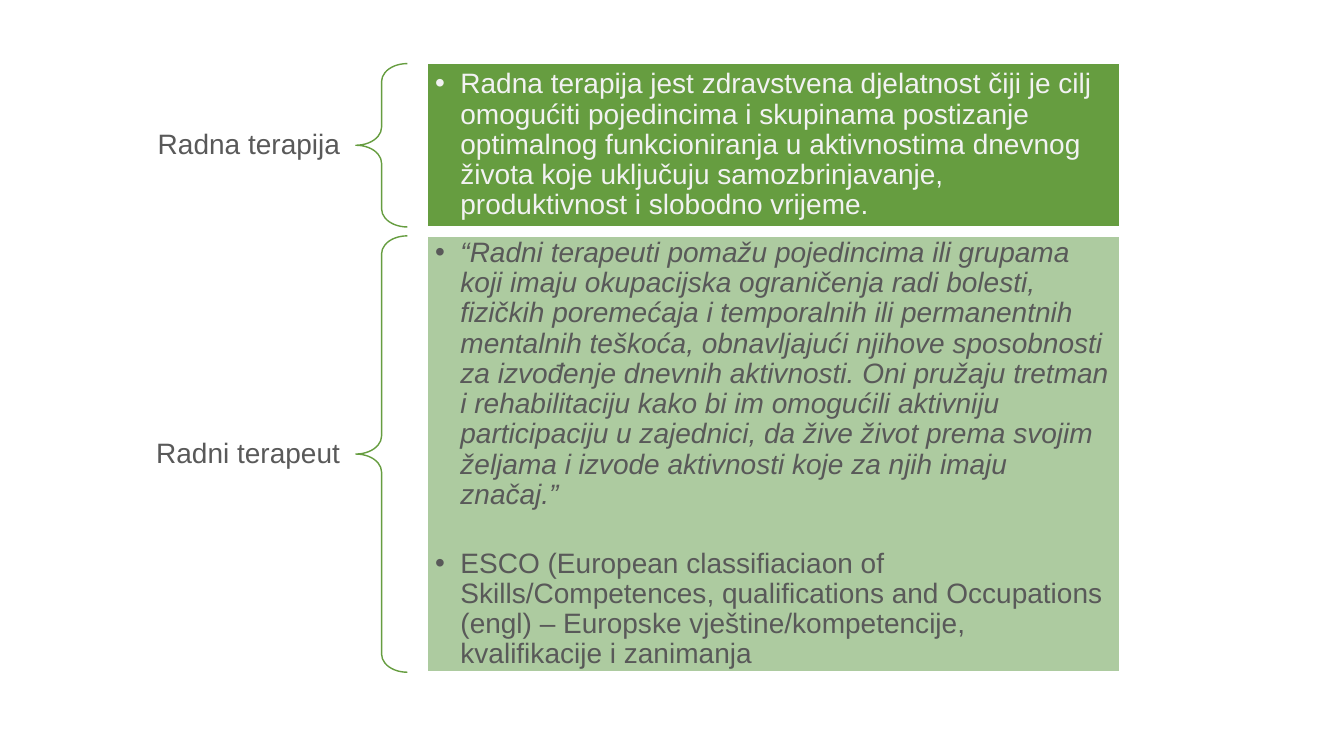
"""Build a slide that defines occupational therapy and the occupational therapist."""
from dataclasses import dataclass

from lxml import etree
from pptx import Presentation
from pptx import util as u
from pptx.dml.color import RGBColor
from pptx.enum import shapes, text
from pptx.oxml.ns import qn

ROWS = [
    {"label": "Radna terapija", "height": 116.7, "fill": "669D40", "color": "F2F2F2",
     "items": [("Radna terapija jest zdravstvena djelatnost čiji je cilj omogućiti "
                "pojedincima i skupinama postizanje optimalnog funkcioniranja u "
                "aktivnostima dnevnog života koje uključuju samozbrinjavanje, "
                "produktivnost i slobodno vrijeme.", False)]},
    {"label": "Radni terapeut", "height": 311.7, "fill": "ADCBA0", "color": "595959",
     "items": [("“Radni terapeuti pomažu pojedincima ili grupama koji imaju okupacijska "
                "ograničenja radi bolesti, fizičkih poremećaja i temporalnih ili "
                "permanentnih mentalnih teškoća, obnavljajući njihove sposobnosti za "
                "izvođenje dnevnih aktivnosti. Oni pružaju tretman i rehabilitaciju kako "
                "bi im omogućili aktivniju participaciju u zajednici, da žive život prema "
                "svojim željama i izvode aktivnosti koje za njih imaju značaj.”", True),
               ("ESCO (European classifiaciaon of Skills/Competences, qualifications and "
                "Occupations (engl) – Europske vještine/kompetencije, kvalifikacije i "
                "zanimanja", False)]},
]


@dataclass(frozen=True)
class Theme:
    """Colours, font and type size."""
    font: str = "Arial"
    size: float = 20
    label: str = "595959"
    brace: str = "669D40"
    edge: str = "FFFFFF"


THEME = Theme()
TOP, ROW_GAP = 45.4, 6.4
LABEL_LEFT, LABEL_WIDTH, LABEL_HEIGHT = 72, 182.2, 31
BRACE_WIDTH, BOX_GAP, BOX_WIDTH = 36.7, 14.4, 494.6
ITEM_GAP, INDENT = 27.6, 18


def write(tf, items, color, align=text.PP_ALIGN.LEFT, bullet=False, inset=(5.6, 5.6)):
    """Fill a text frame with (wording, italic) paragraphs."""
    tf.word_wrap = True
    tf.vertical_anchor = text.MSO_ANCHOR.MIDDLE
    tf.margin_left = tf.margin_right = u.Pt(inset[0])
    tf.margin_top = tf.margin_bottom = u.Pt(inset[1])
    for i, (wording, italic) in enumerate(items):
        p = tf.add_paragraph() if i else tf.paragraphs[0]
        p.alignment, p.line_spacing = align, 0.9
        p.space_before = u.Pt(ITEM_GAP if i else 0)
        if bullet:
            pPr = p._p.get_or_add_pPr()
            pPr.set("marL", str(u.Pt(INDENT)))
            pPr.set("indent", str(u.Pt(-INDENT)))
            etree.SubElement(pPr, qn("a:buFont"), typeface=THEME.font)
            etree.SubElement(pPr, qn("a:buChar"), char="•")
        r = p.add_run()
        r.text = wording
        r.font.name, r.font.size, r.font.italic = THEME.font, u.Pt(THEME.size), italic
        r.font.color.rgb = RGBColor.from_string(color)


def add_shape(s, kind, box, line, fill=None):
    """Add a flat outlined shape."""
    sp = s.shapes.add_shape(kind, *map(u.Pt, box))
    sp.shadow.inherit = False
    sp.line.color.rgb = RGBColor.from_string(line)
    sp.line.width = u.Pt(1)
    if fill:
        sp.fill.solid()
        sp.fill.fore_color.rgb = RGBColor.from_string(fill)
    else:
        sp.fill.background()
    return sp


def main():
    """Lay out the rows and save the deck."""
    prs = Presentation()
    prs.slide_width, prs.slide_height = u.Pt(960), u.Pt(540)
    s = prs.slides.add_slide(prs.slide_layouts[6])
    brace_left = LABEL_LEFT + LABEL_WIDTH
    box_left = brace_left + BRACE_WIDTH + BOX_GAP
    top = TOP
    for row in ROWS:
        height = row["height"]
        label_top = top + (height - LABEL_HEIGHT) / 2
        label = s.shapes.add_textbox(
            *map(u.Pt, (LABEL_LEFT, label_top, LABEL_WIDTH, LABEL_HEIGHT)))
        write(label.text_frame, [(row["label"], False)], THEME.label,
              align=text.PP_ALIGN.RIGHT, inset=(11.2, 4))
        brace = add_shape(s, shapes.MSO_SHAPE.LEFT_BRACE,
                          (brace_left, top, BRACE_WIDTH, height), THEME.brace)
        brace.adjustments[0] = 0.35
        box = add_shape(s, shapes.MSO_SHAPE.RECTANGLE,
                        (box_left, top, BOX_WIDTH, height), THEME.edge, row["fill"])
        write(box.text_frame, row["items"], row["color"], bullet=True)
        top += height + ROW_GAP
    prs.save("out.pptx")


if __name__ == "__main__":
    main()
